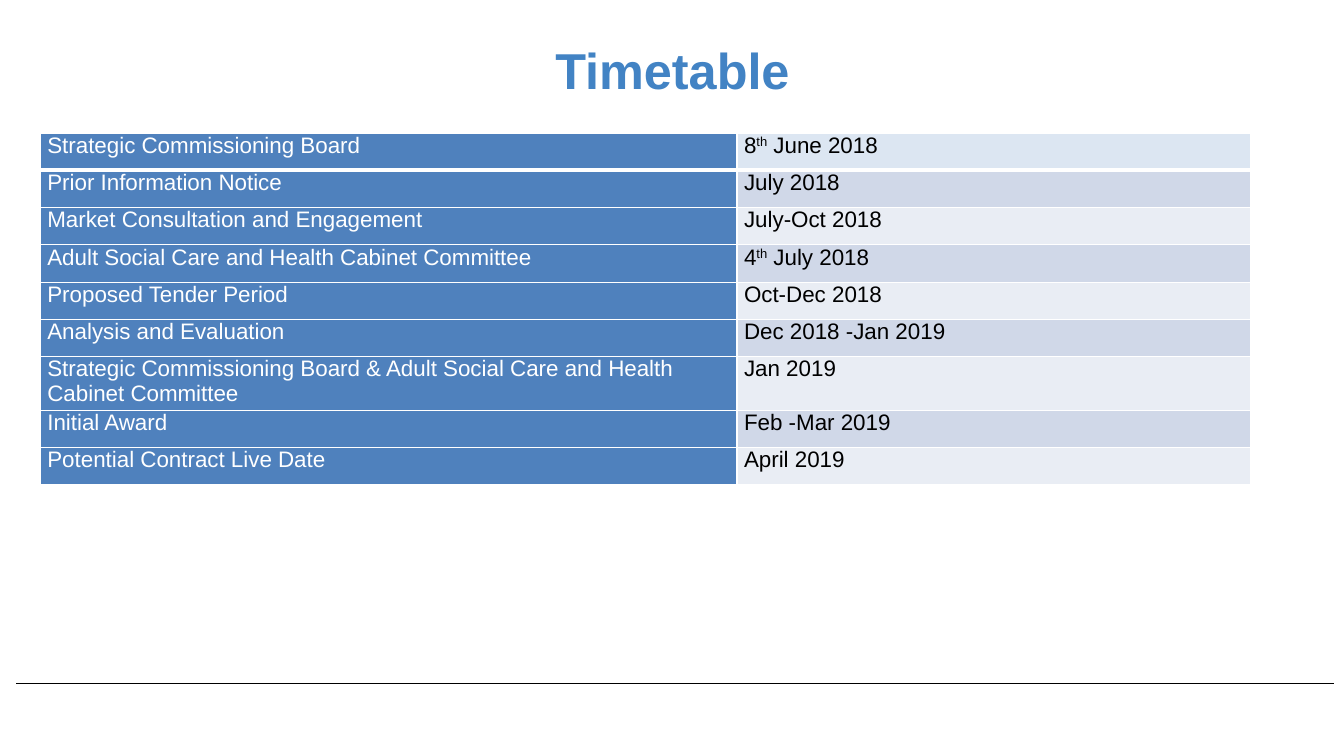
from lxml.etree import SubElement
from pptx import Presentation
from pptx.dml.color import RGBColor
from pptx.enum.shapes import MSO_CONNECTOR
from pptx.enum.text import MSO_ANCHOR, PP_ALIGN
from pptx.oxml.ns import qn
from pptx.util import Pt

PX = 9144

BLACK = RGBColor(0x00, 0x00, 0x00)
WHITE = RGBColor(0xFF, 0xFF, 0xFF)
TITLE_BLUE = RGBColor(0x42, 0x83, 0xC4)
STAGE_BLUE = RGBColor(0x4F, 0x81, 0xBD)
FIRST_DATE = RGBColor(0xDC, 0xE6, 0xF2)
DARK_BAND = RGBColor(0xD0, 0xD8, 0xE8)
LIGHT_BAND = RGBColor(0xE9, 0xED, 0xF4)

TITLE_FORMAT = {"name": "Arial", "size": Pt(36), "bold": True}
CELL_FORMAT = {"name": "Arial", "size": Pt(16), "bold": False}
CELL_MARGINS = {
    "margin_left": 7 * PX,
    "margin_right": 7 * PX,
    "margin_top": 0,
    "margin_bottom": 0,
}

STAGE_SHARE = 691 / 1200
ROW_HEIGHT = 37
TWO_LINE_HEIGHT = 47
TWO_LINE_STAGE = "Strategic Commissioning Board & Adult Social Care and Health Cabinet Committee"

TIMETABLE = [
    ("Strategic Commissioning Board", ["8", "th", " June 2018"]),
    ("Prior Information Notice", ["July 2018"]),
    ("Market Consultation and Engagement", ["July-Oct 2018"]),
    ("Adult Social Care and Health Cabinet Committee", ["4", "th", " July 2018"]),
    ("Proposed Tender Period", ["Oct-Dec 2018"]),
    ("Analysis and Evaluation", ["Dec 2018 -Jan 2019"]),
    (TWO_LINE_STAGE, ["Jan 2019"]),
    ("Initial Award", ["Feb -Mar 2019"]),
    ("Potential Contract Live Date", ["April 2019"]),
]


def apply_format(target, values):
    for attribute, value in values.items():
        setattr(target, attribute, value)


def write_runs(paragraph, parts, text_format, color):
    for part in parts:
        run = paragraph.add_run()
        run.text = part
        apply_format(run.font, text_format)
        run.font.color.rgb = color
        if part == "th":
            run.font._element.set("baseline", "30000")


def add_footer_rule(slide, left, top, width):
    rule = slide.shapes.add_connector(
        MSO_CONNECTOR.STRAIGHT, left * PX, top * PX, (left + width) * PX, top * PX
    )
    rule.line.color.rgb = BLACK
    rule.line.width = Pt(1)
    SubElement(rule._element.spPr, qn("a:effectLst"))


def add_title(slide, left, top, width, height):
    title = slide.shapes.add_textbox(left * PX, top * PX, width * PX, height * PX)
    frame = title.text_frame
    apply_format(frame, {"word_wrap": True, "vertical_anchor": MSO_ANCHOR.MIDDLE})
    heading = frame.paragraphs[0]
    heading.alignment = PP_ALIGN.CENTER
    write_runs(heading, ["Timetable"], TITLE_FORMAT, TITLE_BLUE)


def add_borders(cell, row_index):
    widths = {
        "a:lnL": 1,
        "a:lnR": 1,
        "a:lnT": 3 if row_index == 1 else 1,
        "a:lnB": 3 if row_index == 0 else 1,
    }
    properties = cell._tc.get_or_add_tcPr()
    for side, points in widths.items():
        border = SubElement(properties, qn(side), w=str(Pt(points)))
        border_fill = SubElement(border, qn("a:solidFill"))
        SubElement(border_fill, qn("a:srgbClr"), val=str(WHITE))


def fill_cell(cell, row_index, parts, text_color, background):
    apply_format(cell, CELL_MARGINS)
    add_borders(cell, row_index)
    cell.fill.solid()
    cell.fill.fore_color.rgb = background
    write_runs(cell.text_frame.paragraphs[0], parts, CELL_FORMAT, text_color)


def date_background(row_index):
    if row_index == 0:
        return FIRST_DATE
    return DARK_BAND if row_index % 2 else LIGHT_BAND


def add_timetable(slide, left, top, width):
    heights = [
        TWO_LINE_HEIGHT if stage == TWO_LINE_STAGE else ROW_HEIGHT
        for stage, _ in TIMETABLE
    ]
    timetable = slide.shapes.add_table(
        len(TIMETABLE), 2, left * PX, top * PX, width * PX, sum(heights) * PX
    ).table
    stage_width = round(width * STAGE_SHARE)
    for column, column_width in zip(timetable.columns, (stage_width, width - stage_width)):
        column.width = column_width * PX
    for row_index, (stage, date) in enumerate(TIMETABLE):
        timetable.rows[row_index].height = heights[row_index] * PX
        fill_cell(timetable.cell(row_index, 0), row_index, [stage], WHITE, STAGE_BLUE)
        fill_cell(
            timetable.cell(row_index, 1), row_index, date, BLACK, date_background(row_index)
        )


def main():
    presentation = Presentation()
    apply_format(presentation, {"slide_width": 1333 * PX, "slide_height": 750 * PX})
    slide = presentation.slides.add_slide(presentation.slide_layouts[6])
    add_footer_rule(slide, 16, 678, 1307)
    add_title(slide, 67, 30, 1200, 78)
    add_timetable(slide, 40, 132, 1200)
    presentation.save("out.pptx")


if __name__ == "__main__":
    main()
